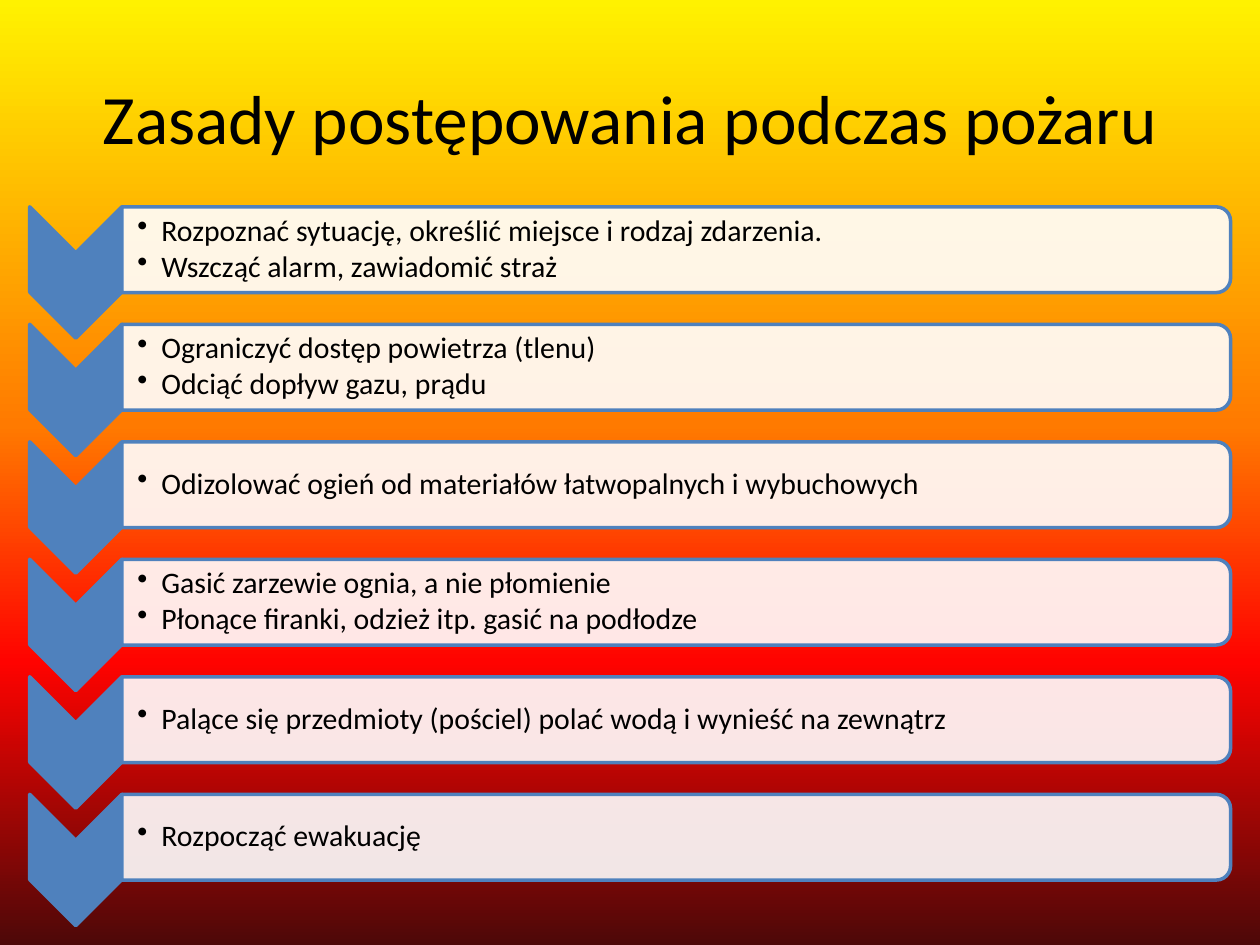
import pptx
import pptx.util
import pptx.dml.color
import pptx.enum.shapes
import pptx.enum.text
import pptx.oxml
import pptx.oxml.ns
from lxml import etree

Pt = pptx.util.Pt
SHAPES = pptx.enum.shapes.MSO_SHAPE
ALIGN = pptx.enum.text.PP_ALIGN
qn = pptx.oxml.ns.qn

FONT = "Calibri"
BLUE = "4F81BD"
FIRE_STOPS = [(0, "FFF200"), (45, "FF7A00"), (70, "FF0300"), (100, "4D0808")]
TITLE = "Zasady postępowania podczas pożaru"
STEPS = [
    ["Rozpoznać sytuację, określić miejsce i rodzaj zdarzenia.",
     "Wszcząć alarm, zawiadomić straż"],
    ["Ograniczyć dostęp powietrza (tlenu)", "Odciąć dopływ gazu, prądu"],
    ["Odizolować ogień od materiałów łatwopalnych i wybuchowych"],
    ["Gasić zarzewie ognia, a nie płomienie",
     "Płonące firanki, odzież itp. gasić na podłodze"],
    ["Palące się przedmioty (pościel) polać wodą i wynieść na zewnątrz"],
    ["Rozpocząć ewakuację"],
]


def color(hex_text):
    return pptx.dml.color.RGBColor.from_string(hex_text)


def paint_background(page):
    fill = page.background.fill
    fill.gradient()
    fill.gradient_angle = 270
    stops = page.background._cSld.find(".//" + qn("a:gsLst"))
    for stop in list(stops):
        stops.remove(stop)
    for percent, hex_text in FIRE_STOPS:
        stop = etree.SubElement(stops, qn("a:gs"), pos=str(percent * 1000))
        etree.SubElement(stop, qn("a:srgbClr"), val=hex_text)


def add_text(page, box, lines, size, margins):
    """Add a vertically centred text box and return its paragraphs."""
    frame = page.shapes.add_textbox(*map(Pt, box)).text_frame
    frame.word_wrap = True
    frame.vertical_anchor = pptx.enum.text.MSO_ANCHOR.MIDDLE
    (frame.margin_left, frame.margin_top,
     frame.margin_right, frame.margin_bottom) = map(Pt, margins)
    frame.text = "\n".join(lines)
    for para in frame.paragraphs:
        for span in para.runs:
            span.font.name = FONT
            span.font.size = Pt(size)
            span.font.color.rgb = color("000000")
    return frame.paragraphs


def add_turned_shape(page, kind, box, fill):
    """Add a shape turned by 90 degrees that covers the given box."""
    left, top, width, height = box
    shift = (width - height) / 2
    shape = page.shapes.add_shape(
        kind, Pt(left + shift), Pt(top - shift), Pt(height), Pt(width))
    shape.rotation = 90
    shape.shadow.inherit = False
    shape.fill.solid()
    shape.fill.fore_color.rgb = color(fill)
    shape.line.color.rgb = color(BLUE)
    shape.line.width = Pt(2)
    return shape


def add_bullet(para):
    para.line_spacing = 0.9
    para.space_after = Pt(2.2)
    properties = para._p.get_or_add_pPr()
    properties.set("marL", str(Pt(13.7)))
    properties.set("indent", str(Pt(-13.7)))
    etree.SubElement(properties, qn("a:buChar"), char="•")


def add_title(page, box):
    para = add_text(page, box, [TITLE], 39.6, (7.2, 3.6, 7.2, 3.6))[0]
    para.alignment = ALIGN.CENTER


def add_step(page, box, lines):
    left, top, width, height = box
    chevron_width, bar_height = 52.6, 49

    # Arrow pointing to the next step
    add_turned_shape(page, SHAPES.CHEVRON, (left, top, chevron_width, height), BLUE)

    # Translucent bar, rounded on the right
    bar_left = left + chevron_width
    bar_box = (bar_left, top, width - chevron_width, bar_height)
    bar = add_turned_shape(page, SHAPES.ROUND_2_SAME_RECTANGLE, bar_box, "FFFFFF")
    bar_color = bar._element.spPr.find(qn("a:solidFill") + "/" + qn("a:srgbClr"))
    etree.SubElement(bar_color, qn("a:alpha"), val="90000")

    # Instructions
    text_box = (bar_left - 0.5, top + 2.5, width - chevron_width - 2, bar_height - 5)
    for para in add_text(page, text_box, lines, 17, (9.4, 0.8, 0.8, 0.8)):
        add_bullet(para)


def add_steps(page, box):
    left, top, width, height = box
    step_height = 75
    pitch = (height - step_height) / (len(STEPS) - 1)
    for index, lines in enumerate(STEPS):
        add_step(page, (left, top + index * pitch, width, step_height), lines)


def main():
    deck = pptx.Presentation()
    deck.slide_width, deck.slide_height = Pt(720), Pt(540)
    page = deck.slides.add_slide(deck.slide_layouts[6])
    paint_background(page)
    add_title(page, (36, 21.6, 648, 90))
    add_steps(page, (17, 118.2, 686.2, 410.7))
    deck.save("out.pptx")


if __name__ == "__main__":
    main()
